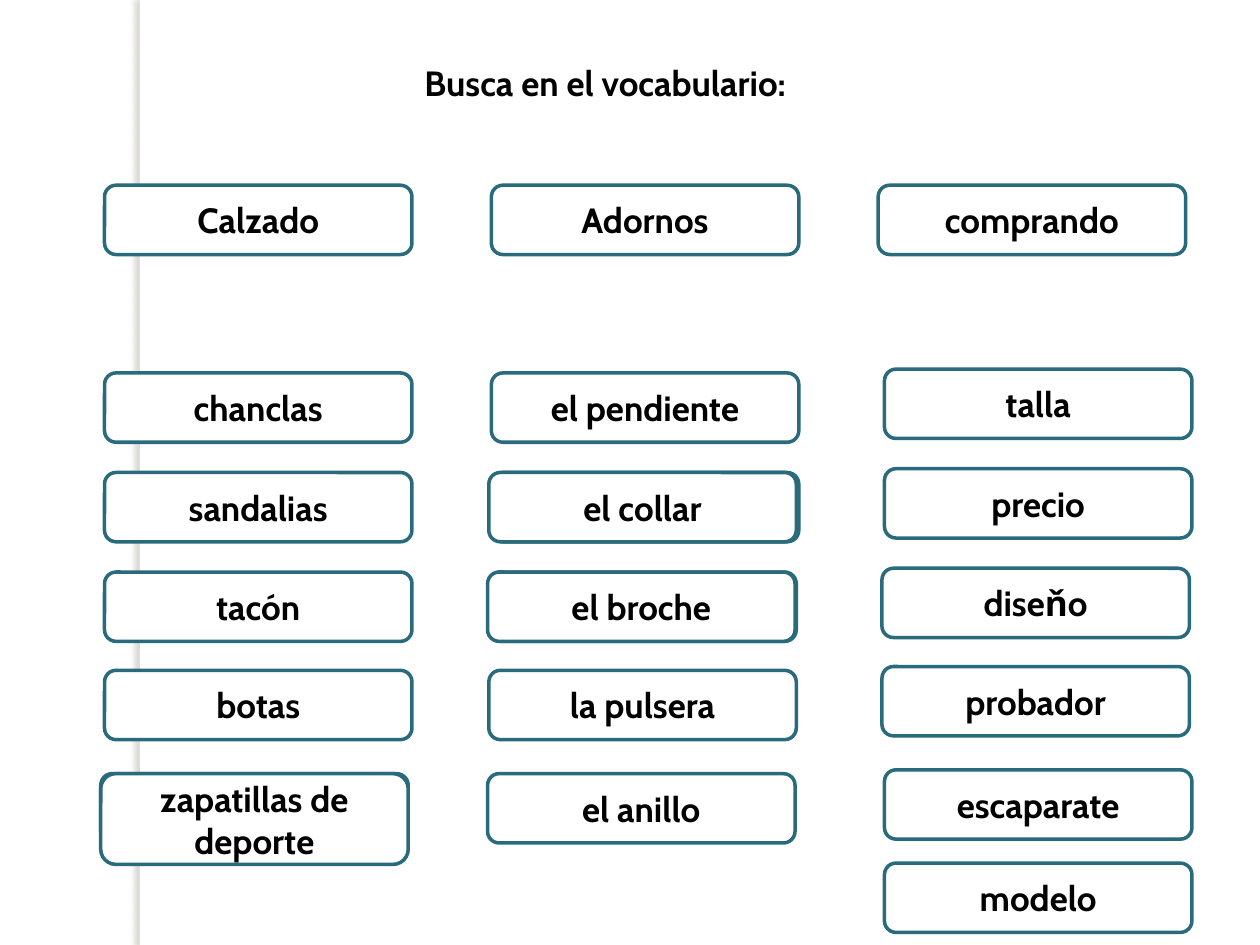
from lxml import etree
from pptx import Presentation
from pptx.dml.color import RGBColor
from pptx.enum.shapes import MSO_SHAPE
from pptx.enum.text import MSO_ANCHOR, MSO_AUTO_SIZE, PP_ALIGN
from pptx.oxml.ns import qn
from pptx.util import Emu, Pt

PX = 9144  # 100 px to the inch
FONT, INK, PAPER, TEAL, SHADE = "Cabin", "000000", "FFFFFF", "296B7C", "736F63"
CARD_W, CARD_H, TALL_H = 244, 55, 72
HEADER_TOP = 147
ROW_TOPS = [296, 375, 454, 532, 614, 688]

TITLE = "Busca en el vocabulario:"
# Each column: header, header left, shift of its rows, then (word, left)
COLUMNS = [
    ("Calzado", 83, 0, [("chanclas", 83), ("sandalias", 83), ("tacón", 83),
                        ("botas", 83), ("zapatillas de deporte", 80)]),
    ("Adornos", 390, 0, [("el pendiente", 390), ("el collar", 388), ("el broche", 387),
                         ("la pulsera", 388), ("el anillo", 387)]),
    ("comprando", 697, -3, [("talla", 702), ("precio", 702), ("diseňo", 700),
                            ("probador", 700), ("escaparate", 702), ("modelo", 702)]),
]
# Empty cards that peep out behind some words: (left, row)
BACKING = [(390, 1), (388, 2), (80, 4)]


def px(n):
    return Emu(n * PX)


def color(hex_code):
    return RGBColor.from_string(hex_code)


def style(paragraph):
    font = paragraph.font
    font.name, font.size, font.bold = FONT, Pt(20), True
    font.color.rgb = color(INK)


def add_box(slide, kind, left, top, width, height):
    box = slide.shapes.add_shape(kind, px(left), px(top), px(width), px(height))
    box.shadow.inherit = False
    box.fill.solid()
    box.fill.fore_color.rgb = color(PAPER)
    return box


def add_card(slide, left, top, word="", height=CARD_H):
    card = add_box(slide, MSO_SHAPE.ROUNDED_RECTANGLE, left, top, CARD_W, height)
    card.line.color.rgb = color(TEAL)
    card.line.width = Pt(2)
    if word:
        frame = card.text_frame
        frame.word_wrap = True
        frame.vertical_anchor = MSO_ANCHOR.MIDDLE
        paragraph = frame.paragraphs[0]
        paragraph.text = word
        paragraph.alignment = PP_ALIGN.CENTER
        style(paragraph)


def add_margin_strip(slide):
    strip = add_box(slide, MSO_SHAPE.RECTANGLE, 111, 0, 8, 750)
    strip.line.fill.background()
    effects = strip.fill._xPr.find(qn("a:effectLst"))
    shadow = etree.SubElement(effects, qn("a:outerShdw"), blurRad=str(Pt(3)),
                              dist=str(Pt(3)), dir=str(180 * 60000),
                              algn="tl", rotWithShape="0")
    tint = etree.SubElement(shadow, qn("a:srgbClr"), val=SHADE)
    etree.SubElement(tint, qn("a:alpha"), val="25000")


def main():
    prs = Presentation()
    prs.slide_width, prs.slide_height = px(1000), px(750)
    slide = prs.slides.add_slide(prs.slide_layouts[6])
    add_margin_strip(slide)

    # Title
    title = slide.shapes.add_textbox(px(327), px(44), px(334), px(44)).text_frame
    title.word_wrap = False
    title.auto_size = MSO_AUTO_SIZE.SHAPE_TO_FIT_TEXT
    title.paragraphs[0].text = TITLE
    style(title.paragraphs[0])

    # Headers, then backing cards, then words
    for header, left, _, _ in COLUMNS:
        add_card(slide, left, HEADER_TOP, header)
    for left, row in BACKING:
        add_card(slide, left, ROW_TOPS[row])
    for _, _, shift, words in COLUMNS:
        for (word, left), top in zip(words, ROW_TOPS):
            height = TALL_H if len(word) > 15 else CARD_H
            add_card(slide, left, top + shift, word, height)

    prs.save("out.pptx")


if __name__ == "__main__":
    main()
